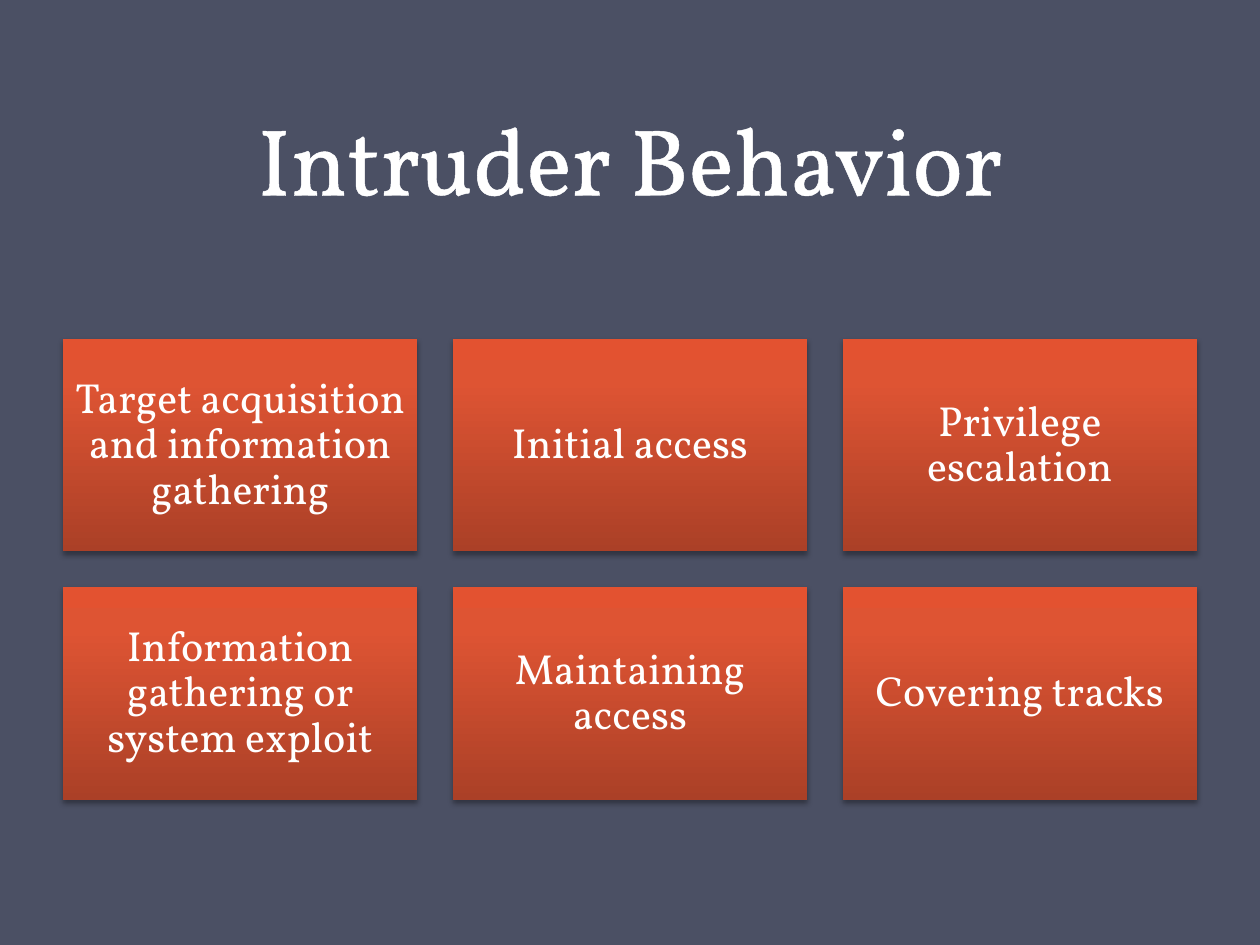
from dataclasses import dataclass

import pptx
import pptx.dml.color
import pptx.enum.shapes
import pptx.enum.text
import pptx.oxml
import pptx.oxml.ns
import pptx.shapes.base
import pptx.shapes.shapetree
import pptx.util

Pt = pptx.util.Pt
RGBColor = pptx.dml.color.RGBColor

SLATE = RGBColor(0x4B, 0x50, 0x64)
WHITE = RGBColor(0xFF, 0xFF, 0xFF)
RUST = RGBColor(0xAB, 0x40, 0x27)
ORANGE = RGBColor(0xDE, 0x54, 0x33)
BRIGHT_ORANGE = RGBColor(0xE3, 0x52, 0x30)
BLACK = RGBColor(0, 0, 0)

FONT_NAME = "Vollkorn"
NAMESPACE = pptx.oxml.ns.nsdecls("a")
GRADIENT_STOPS = ((0, RUST), (80, ORANGE), (100, BRIGHT_ORANGE))

COLUMNS = 3
MARGIN, GRID_TOP = 36, 193.7
CARD_WIDTH, CARD_HEIGHT, GAP = 202.5, 121.5, 20.25
INSET = 7.2


@dataclass(frozen=True)
class Card:
    text: str
    column: int
    row: int


LABELS = (
    "Target acquisition and information gathering",
    "Initial access",
    "Privilege escalation",
    "Information gathering or system exploit",
    "Maintaining access",
    "Covering tracks",
)
CARDS = [Card(label, i % COLUMNS, i // COLUMNS) for i, label in enumerate(LABELS)]


def apply_format(target: object, values: dict) -> None:
    for name, value in values.items():
        setattr(target, name, value)


def write_text(shape: pptx.shapes.base.BaseShape, text: str, size: float,
               line_spacing: float, frame_format: dict) -> None:
    frame = shape.text_frame
    apply_format(frame, {"word_wrap": True, **frame_format})
    paragraph = frame.paragraphs[0]
    apply_format(paragraph, {
        "alignment": pptx.enum.text.PP_ALIGN.CENTER,
        "line_spacing": line_spacing,
    })
    run = paragraph.add_run()
    run.text = text
    apply_format(run.font, {"name": FONT_NAME, "size": Pt(size), "bold": False})
    run.font.color.rgb = WHITE


def add_title(slide: pptx.slide.Slide) -> None:
    title = slide.shapes.title
    apply_format(title, {"left": Pt(MARGIN), "top": Pt(0),
                         "width": Pt(648), "height": Pt(126)})
    write_text(title, "Intruder Behavior", 54, Pt(58), {
        "vertical_anchor": pptx.enum.text.MSO_ANCHOR.BOTTOM,
        "auto_size": pptx.enum.text.MSO_AUTO_SIZE.NONE,
    })
    outline = pptx.oxml.parse_xml(
        f'<a:ln {NAMESPACE} w="{Pt(1.45)}"><a:solidFill>'
        f'<a:srgbClr val="{WHITE}"/></a:solidFill></a:ln>')
    run = title.text_frame.paragraphs[0].runs[0]
    run._r.get_or_add_rPr().insert(0, outline)


def add_gradient_and_shadow(shape: pptx.shapes.base.BaseShape) -> None:
    shape.line.fill.background()
    shape.shadow.inherit = False
    properties = shape._element.spPr
    stops = "".join(
        f'<a:gs pos="{position * 1000}"><a:srgbClr val="{color}"/></a:gs>'
        for position, color in GRADIENT_STOPS)
    gradient = pptx.oxml.parse_xml(
        f'<a:gradFill {NAMESPACE} rotWithShape="1"><a:gsLst>{stops}</a:gsLst>'
        '<a:lin ang="16200000" scaled="0"/></a:gradFill>')
    properties.find(pptx.oxml.ns.qn("a:prstGeom")).addnext(gradient)
    shadow = pptx.oxml.parse_xml(
        f'<a:outerShdw {NAMESPACE} blurRad="{Pt(3.1)}" dist="{Pt(1.8)}" '
        f'dir="5400000" rotWithShape="0"><a:srgbClr val="{BLACK}">'
        '<a:alpha val="35000"/></a:srgbClr></a:outerShdw>')
    properties.find(pptx.oxml.ns.qn("a:effectLst")).append(shadow)


def add_card(shapes: pptx.shapes.shapetree.GroupShapes, card: Card) -> None:
    shape = shapes.add_shape(
        pptx.enum.shapes.MSO_SHAPE.RECTANGLE,
        Pt(MARGIN + card.column * (CARD_WIDTH + GAP)),
        Pt(GRID_TOP + card.row * (CARD_HEIGHT + GAP)),
        Pt(CARD_WIDTH), Pt(CARD_HEIGHT))
    add_gradient_and_shadow(shape)
    margins = {f"margin_{side}": Pt(INSET)
               for side in ("left", "top", "right", "bottom")}
    write_text(shape, card.text, 24, 0.9, {
        "vertical_anchor": pptx.enum.text.MSO_ANCHOR.MIDDLE, **margins})


def main() -> None:
    presentation = pptx.Presentation()
    apply_format(presentation, {"slide_width": Pt(720), "slide_height": Pt(540)})
    slide = presentation.slides.add_slide(presentation.slide_layouts[5])
    slide.background.fill.solid()
    slide.background.fill.fore_color.rgb = SLATE
    add_title(slide)
    group = slide.shapes.add_group_shape()
    for card in CARDS:
        add_card(group.shapes, card)
    presentation.save("out.pptx")


if __name__ == "__main__":
    main()
